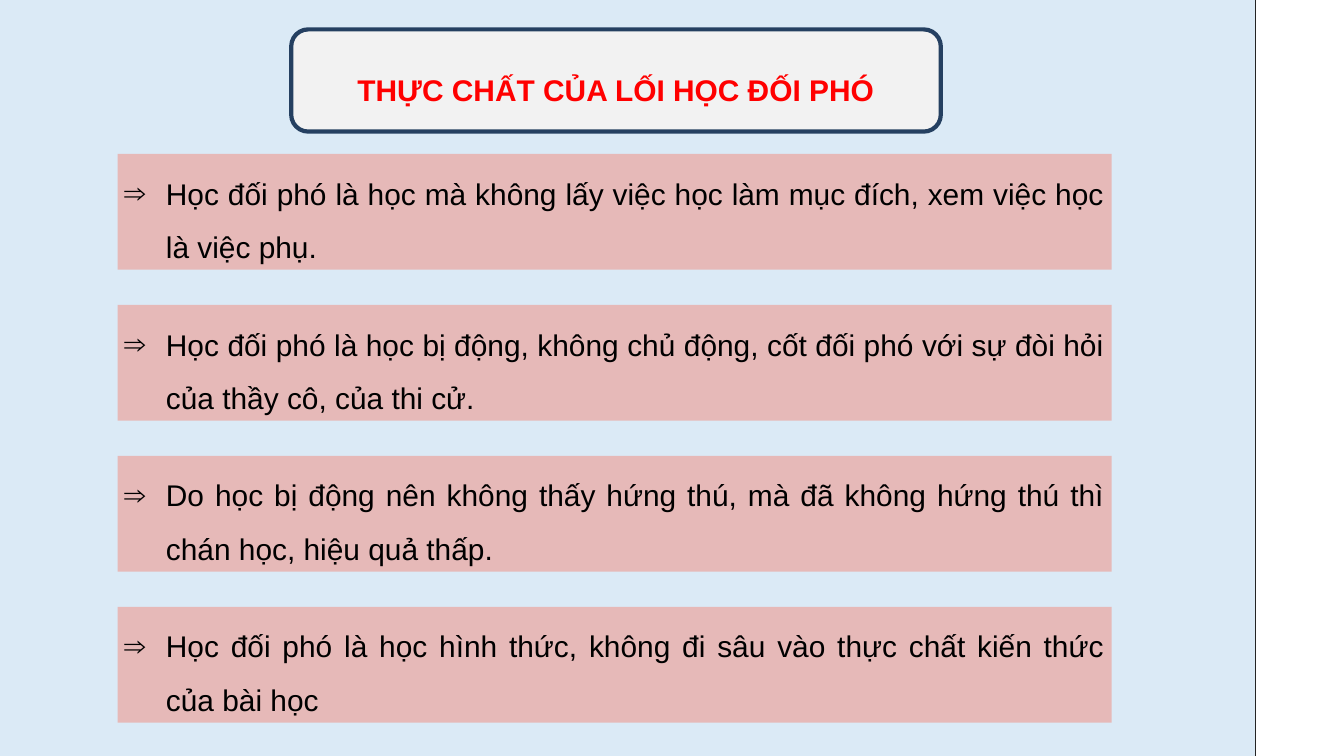
from dataclasses import dataclass

import pptx
import pptx.dml.color
import pptx.enum.shapes
import pptx.enum.text
import pptx.oxml
import pptx.oxml.ns
import pptx.util
from lxml import etree

Pt = pptx.util.Pt
RGB = pptx.dml.color.RGBColor.from_string
Preset = pptx.enum.shapes.MSO_SHAPE
Align = pptx.enum.text.PP_ALIGN
Anchor = pptx.enum.text.MSO_ANCHOR
AutoSize = pptx.enum.text.MSO_AUTO_SIZE


@dataclass(frozen=True)
class Theme:
    background: str = "DBEAF6"
    margin_fill: str = "FFFFFF"
    margin_line: str = "242424"
    heading_fill: str = "F2F2F2"
    heading_line: str = "254061"
    heading_text: str = "FF0000"
    point_fill: str = "E6B9B8"
    point_text: str = "000000"
    font: str = "Arial"
    size: int = 32


THEME = Theme()

HEADING = "THỰC CHẤT CỦA LỐI HỌC ĐỐI PHÓ"
POINTS = [
    "Học đối phó là học mà không lấy việc học làm mục đích, xem việc học là việc phụ.",
    "Học đối phó là học bị động, không chủ động, cốt đối phó với sự đòi hỏi của thầy cô, của thi cử.",
    "Do học bị động nên không thấy hứng thú, mà đã không hứng thú thì chán học, hiệu quả thấp.",
    "Học đối phó là học hình thức, không đi sâu vào thực chất kiến thức của bài học",
]
POINT_LEFT, POINT_TOP, POINT_WIDTH, POINT_HEIGHT = 126, 165, 1065, 124
POINT_PITCH = 161.75
BULLET_INDENT = 44.64


def apply_format(target, values):
    for name, value in values.items():
        setattr(target, name, value)


def add_panel(slide, preset, box, fill, line=None, line_width=0):
    panel = slide.shapes.add_shape(preset, *(Pt(length) for length in box))
    panel.shadow.inherit = False
    panel.fill.solid()
    panel.fill.fore_color.rgb = RGB(fill)
    if line:
        panel.line.color.rgb = RGB(line)
        panel.line.width = Pt(line_width)
    else:
        panel.line.fill.background()
    return panel


def write_text(panel, text, color, frame_format, paragraph_format, font_format):
    frame = panel.text_frame
    apply_format(frame, {"word_wrap": True, **frame_format})
    paragraph = frame.paragraphs[0]
    apply_format(paragraph, {"line_spacing": 1.5, **paragraph_format})
    run = paragraph.add_run()
    run.text = text
    apply_format(run.font, {"name": THEME.font, "size": Pt(THEME.size), **font_format})
    run.font.color.rgb = RGB(color)
    return paragraph


def add_bullet(paragraph, symbol):
    properties = paragraph._p.get_or_add_pPr()
    properties.set("marL", str(Pt(BULLET_INDENT)))
    properties.set("indent", str(-Pt(BULLET_INDENT)))
    qn = pptx.oxml.ns.qn
    etree.SubElement(properties, qn("a:buFont"), typeface=THEME.font)
    etree.SubElement(properties, qn("a:buChar"), char=symbol)


def add_heading(slide):
    panel = add_panel(slide, Preset.ROUNDED_RECTANGLE, (312, 31.5, 696, 109.5),
                      THEME.heading_fill, THEME.heading_line, 4.5)
    write_text(panel, HEADING, THEME.heading_text,
               {"vertical_anchor": Anchor.MIDDLE},
               {"alignment": Align.CENTER},
               {"bold": True})


def add_point(slide, row, text):
    box = (POINT_LEFT, POINT_TOP + row * POINT_PITCH, POINT_WIDTH, POINT_HEIGHT)
    panel = add_panel(slide, Preset.RECTANGLE, box, THEME.point_fill)
    paragraph = write_text(
        panel, text, THEME.point_text,
        {"vertical_anchor": Anchor.TOP, "auto_size": AutoSize.SHAPE_TO_FIT_TEXT},
        {"alignment": Align.JUSTIFY, "space_before": Pt(6), "space_after": Pt(6)},
        {"bold": False})
    add_bullet(paragraph, "⇒")


def main():
    deck = pptx.Presentation()
    apply_format(deck, {"slide_width": Pt(1440), "slide_height": Pt(810)})
    slide = deck.slides.add_slide(deck.slide_layouts[6])
    slide.background.fill.solid()
    slide.background.fill.fore_color.rgb = RGB(THEME.background)

    add_panel(slide, Preset.RECTANGLE, (1345, -26, 119, 865),
              THEME.margin_fill, THEME.margin_line, 1)
    add_heading(slide)
    for row, text in enumerate(POINTS):
        add_point(slide, row, text)
    deck.save("out.pptx")


if __name__ == "__main__":
    main()
